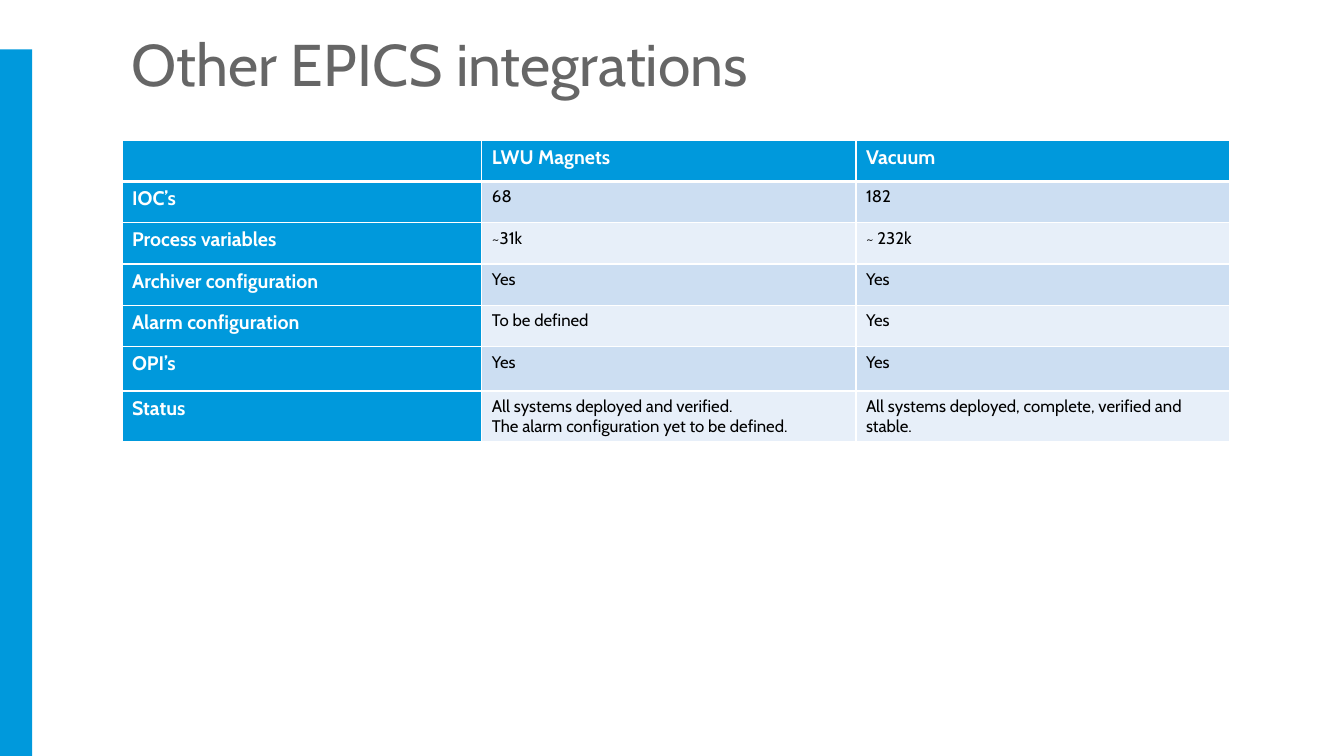
from lxml import etree
from pptx import Presentation
from pptx.dml.color import RGBColor
from pptx.enum.shapes import MSO_SHAPE
from pptx.enum.text import MSO_ANCHOR
from pptx.oxml.ns import qn
from pptx.util import Inches, Pt

COLORS = {
    "blue": "0099DC",
    "title": "666666",
    "dark_band": "CCDEF2",
    "light_band": "E7EFF9",
    "white": "FFFFFF",
    "black": "000000",
}


def add_text(paragraph, text, size, color, bold=False):
    run = paragraph.add_run()
    run.text = text
    run.font.name = "Cabin"
    run.font.size = Pt(size)
    run.font.bold = bold
    run.font.color.rgb = RGBColor.from_string(COLORS[color])


def add_border(cell, side, width):
    properties = cell._tc.get_or_add_tcPr()
    line = etree.SubElement(properties, qn(f"a:ln{side}"), w=str(Pt(width)))
    fill = etree.SubElement(line, qn("a:solidFill"))
    etree.SubElement(fill, qn("a:srgbClr"), val=COLORS["white"])


presentation = Presentation()
presentation.slide_width = Inches(13.33)
presentation.slide_height = Inches(7.5)
slide = presentation.slides.add_slide(presentation.slide_layouts[6])

# Side bar
side_bar = slide.shapes.add_shape(
    MSO_SHAPE.RECTANGLE, Inches(0), Inches(0.49), Inches(0.32), Inches(7.01))
side_bar.shadow.inherit = False
side_bar.fill.solid()
side_bar.fill.fore_color.rgb = RGBColor.from_string(COLORS["blue"])
side_bar.line.fill.background()

# Title
title = slide.shapes.add_textbox(Inches(1.21), Inches(0.29), Inches(10.24), Inches(0.72))
title_frame = title.text_frame
title_frame.word_wrap = True
title_frame.vertical_anchor = MSO_ANCHOR.MIDDLE
title_frame.margin_bottom = Inches(0.02)
title_paragraph = title_frame.paragraphs[0]
title_paragraph.line_spacing = 0.9
add_text(title_paragraph, "Other EPICS integrations", 42, "title")

# Integration table
rows = [
    ["", "LWU Magnets", "Vacuum"],
    ["IOC’s", "68", "182"],
    ["Process variables", "~31k", "~ 232k"],
    ["Archiver configuration", "Yes", "Yes"],
    ["Alarm configuration", "To be defined", "Yes"],
    ["OPI’s", "Yes", "Yes"],
    ["Status",
     "All systems deployed and verified.\nThe alarm configuration yet to be defined.",
     "All systems deployed, complete, verified and stable."],
]
column_widths = [3.57, 3.71, 3.71]
row_heights = [0.41, 0.41, 0.41, 0.41, 0.41, 0.44, 0.41]
table = slide.shapes.add_table(
    len(rows), len(column_widths), Inches(1.21), Inches(1.39),
    Inches(11), Inches(2.97)).table
table.first_col = True
for column, width in zip(table.columns, column_widths):
    column.width = Inches(width)

for row_index, texts in enumerate(rows):
    table.rows[row_index].height = Inches(row_heights[row_index])
    band = "dark_band" if row_index % 2 else "light_band"
    for column_index, text in enumerate(texts):
        cell = table.cell(row_index, column_index)
        is_heading = row_index == 0 or column_index == 0

        # The rule under the header row is thicker
        add_border(cell, "L", 1)
        add_border(cell, "R", 1)
        add_border(cell, "T", 3 if row_index == 1 else 1)
        add_border(cell, "B", 3 if row_index == 0 else 1)
        cell.fill.solid()
        cell.fill.fore_color.rgb = RGBColor.from_string(
            COLORS["blue" if is_heading else band])

        if not text:
            continue
        for line_index, line_text in enumerate(text.split("\n")):
            text_frame = cell.text_frame
            paragraph = text_frame.add_paragraph() if line_index else text_frame.paragraphs[0]
            if is_heading:
                add_text(paragraph, line_text, 14, "white", bold=True)
            else:
                add_text(paragraph, line_text, 12, "black")

presentation.save("out.pptx")
